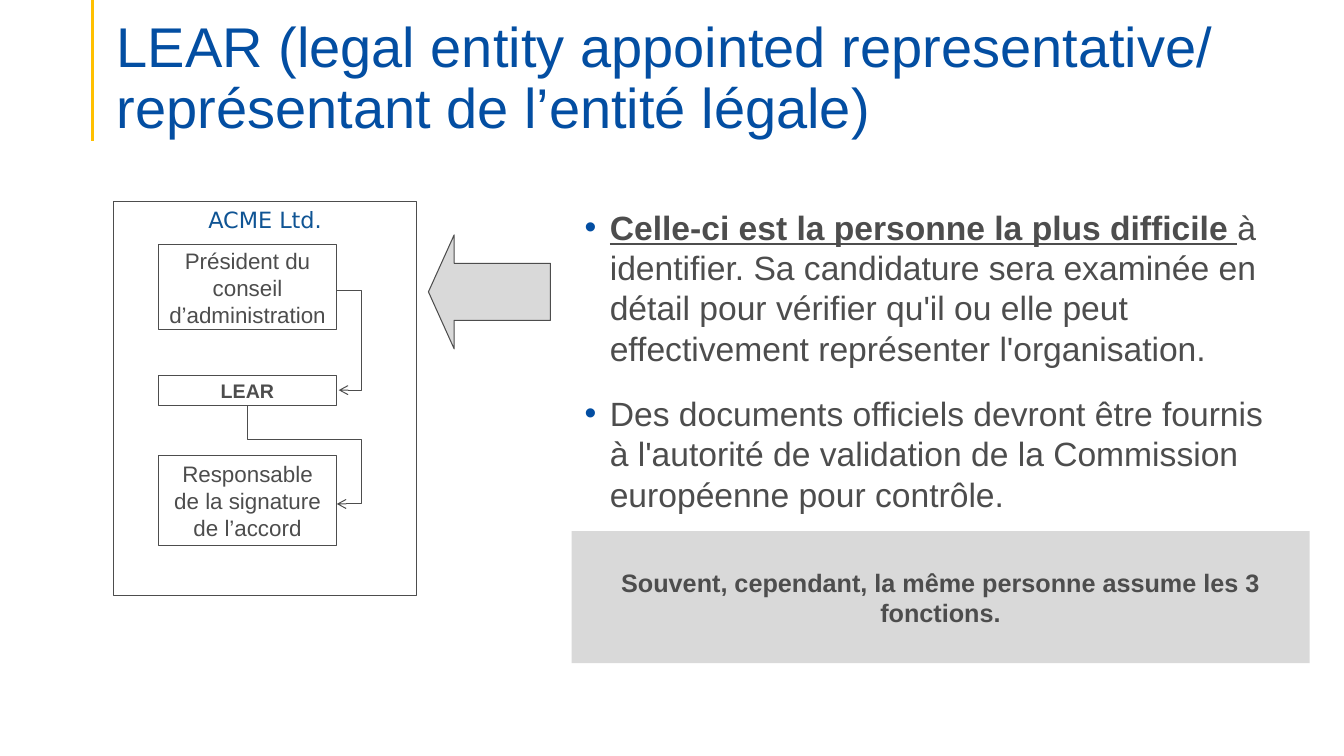
from lxml.etree import SubElement
from pptx import Presentation
from pptx.dml.color import RGBColor
from pptx.enum.shapes import MSO_CONNECTOR, MSO_SHAPE
from pptx.enum.text import MSO_ANCHOR, PP_ALIGN
from pptx.oxml.ns import qn
from pptx.util import Inches, Pt

COLORS = {"blue": "034EA2", "company": "0F5494", "text": "4D4D4D",
          "grey": "D9D9D9", "gold": "FFC000"}
COLORS = {name: RGBColor.from_string(value) for name, value in COLORS.items()}

deck = Presentation()
deck.slide_width, deck.slide_height = Inches(13.33), Inches(7.5)
page = deck.slides.add_slide(deck.slide_layouts[6])


def place(*shares):
    """Turn percentages of the slide's width and height into lengths."""
    sides = (deck.slide_width, deck.slide_height) * 2
    return [round(side * share / 100) for side, share in zip(sides, shares)]


def set_font(para, size, color="text", bold=False, name="Arial"):
    font = para.font
    font.name, font.size, font.bold = name, Pt(size), bold
    font.color.rgb = COLORS[color]


# Title with its gold rule
rule = page.shapes.add_connector(MSO_CONNECTOR.STRAIGHT, *place(6.9, 0, 6.9, 18.67))
rule.line.color.rgb = COLORS["gold"]
rule.line.width = Pt(2.25)
SubElement(rule._element.spPr, qn("a:effectLst"))

title = page.shapes.add_textbox(*place(7.95, 7.07, 86.27, 11.47)).text_frame
title.word_wrap = True
title.vertical_anchor = MSO_ANCHOR.BOTTOM
title.margin_bottom = 0
title.text = "LEAR (legal entity appointed representative/ représentant de l’entité légale)"
title.paragraphs[0].line_spacing = 0.9
set_font(title.paragraphs[0], 40, "blue")

# Bulleted explanation: each point is an emphasised start and the rest
points = [
    ("Celle-ci est la personne la plus difficile ",
     "à identifier. Sa candidature sera examinée en détail pour vérifier qu'il ou elle "
     "peut effectivement représenter l'organisation."),
    ("", "Des documents officiels devront être fournis à l'autorité de validation de la "
         "Commission européenne pour contrôle."),
]
body = page.shapes.add_textbox(*place(42.76, 26.67, 53.49, 42.53)).text_frame
body.word_wrap = True
for index, (emphasis, rest) in enumerate(points):
    para = body.add_paragraph() if index else body.paragraphs[0]
    para.space_after = Pt(18)
    properties = para._p.get_or_add_pPr()
    properties.set("marL", str(Inches(0.25)))
    properties.set("indent", str(-Inches(0.25)))
    bullet_color = SubElement(properties, qn("a:buClr"))
    SubElement(bullet_color, qn("a:srgbClr"), val=str(COLORS["blue"]))
    SubElement(properties, qn("a:buFont"), typeface="Arial")
    SubElement(properties, qn("a:buChar"), char="•")
    set_font(para, 24)
    if emphasis:
        span = para.add_run()
        span.text = emphasis
        span.font.bold = span.font.underline = True
    para.add_run().text = rest

# Company frame, its three roles, the arrow and the closing remark
role_left, role_width = 11.78, 13.28
role_right = role_left + role_width
middle, top = MSO_ANCHOR.MIDDLE, MSO_ANCHOR.TOP
boxes = [
    # text, place, fill, outlined, anchor, font
    ("ACME Ltd.", (8.48, 26.67, 22.5, 52.13), None, True, top,
     (16, "company", False, "DejaVu Sans")),
    ("Président du conseil d’administration", (role_left, 32.4, role_width, 11.2),
     None, True, middle, (16,)),
    ("LEAR", (role_left, 49.73, role_width, 3.87), None, True, middle, (14, "text", True)),
    ("Responsable de la signature de l’accord", (role_left, 60.27, role_width, 11.87),
     None, True, middle, (16,)),
    ("", (31.88, 31.07, 9.08, 15.07), "grey", True, middle, (16,)),
    ("Souvent, cependant, la même personne assume les 3 fonctions.",
     (42.53, 70.27, 54.91, 17.47), "grey", False, middle, (18, "text", True)),
]
for text, shares, fill, outlined, anchor, font in boxes:
    kind = MSO_SHAPE.RECTANGLE if text else MSO_SHAPE.LEFT_ARROW
    box = page.shapes.add_shape(kind, *place(*shares))
    box.shadow.inherit = False
    if fill:
        box.fill.solid()
        box.fill.fore_color.rgb = COLORS[fill]
    else:
        box.fill.background()
    if outlined:
        box.line.color.rgb = COLORS["text"]
        box.line.width = Pt(0.75)
    else:
        box.line.fill.background()
    if text:
        frame = box.text_frame
        frame.word_wrap = True
        frame.vertical_anchor = anchor
        frame.text = text
        frame.paragraphs[0].alignment = PP_ALIGN.CENTER
        set_font(frame.paragraphs[0], *font)
    else:
        box.adjustments[0], box.adjustments[1] = 0.5, 0.226

# Elbow links, both bending at the same column right of the roles
bend, gap_row = 26.93, 58.13
role_center = role_left + role_width / 2
links = [
    # preset, begin and end, bends as shares of the link's size, arrowhead
    ("bentConnector3", (role_right, 38.4, 25.2, 51.6),
     [(bend - role_right) / (25.2 - role_right)], "a:tailEnd"),
    ("bentConnector4", (role_right, 66.67, role_center, 53.6),
     [(bend - role_right) / (role_center - role_right),
      (gap_row - 66.67) / (53.6 - 66.67)], "a:headEnd"),
]
for preset, ends, bends, arrowhead in links:
    link = page.shapes.add_connector(MSO_CONNECTOR.ELBOW, *place(*ends))
    link.line.color.rgb = COLORS["text"]
    link.line.width = Pt(0.75)
    SubElement(link.line._get_or_add_ln(), qn(arrowhead), type="arrow")
    properties = link._element.spPr
    SubElement(properties, qn("a:effectLst"))
    geometry = properties.find(qn("a:prstGeom"))
    geometry.set("prst", preset)
    for number, share in enumerate(bends, 1):
        SubElement(geometry.find(qn("a:avLst")), qn("a:gd"),
                   name=f"adj{number}", fmla=f"val {round(share * 100000)}")

deck.save("out.pptx")
